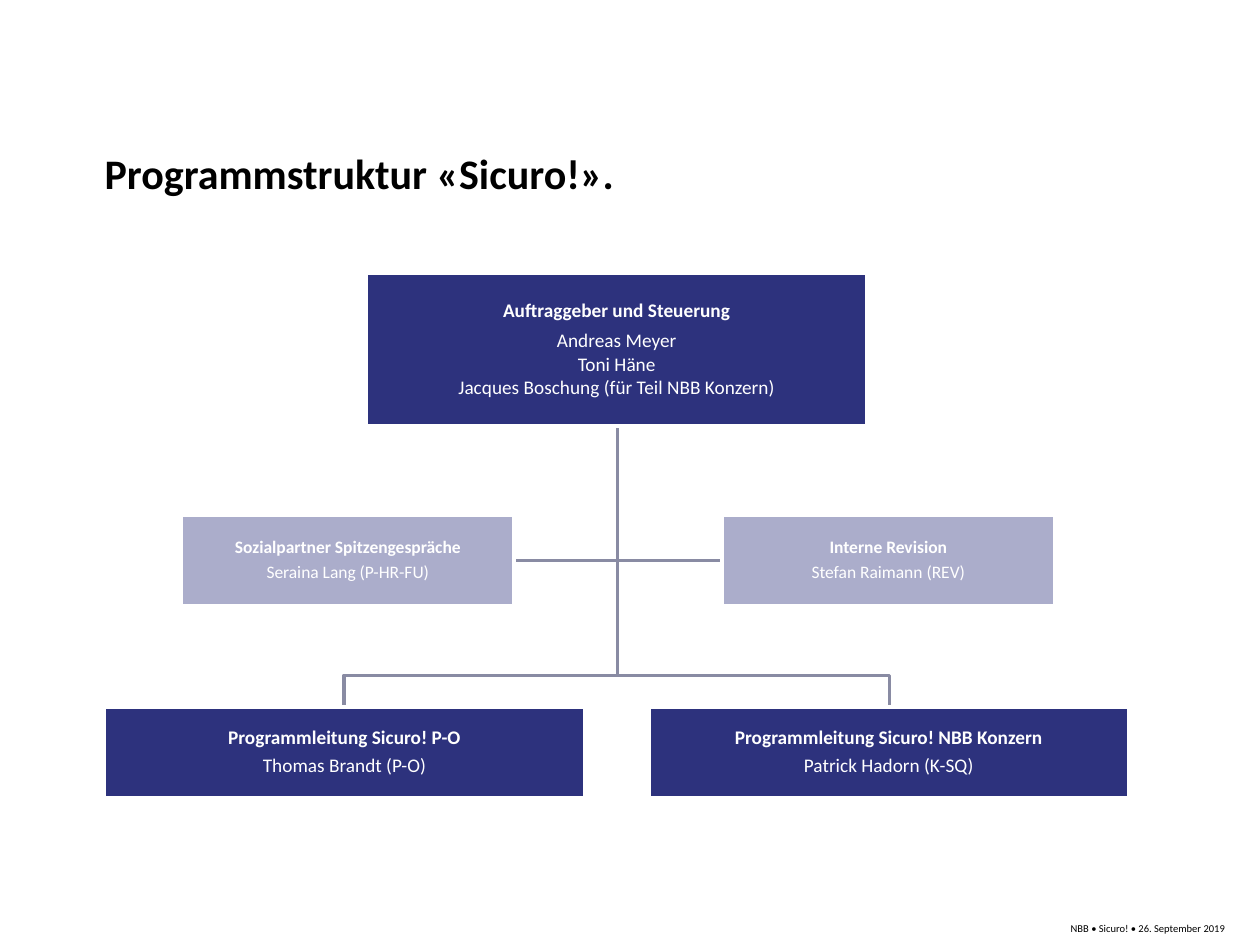
from pptx import Presentation
from pptx.dml.color import RGBColor
from pptx.enum.shapes import MSO_SHAPE
from pptx.enum.text import MSO_ANCHOR, PP_ALIGN
from pptx.util import Inches, Pt

COLORS = {"navy": "2D327D", "lilac": "ABADCB", "line": "898BA3",
          "white": "FFFFFF", "black": "000000"}
FONT = "Calibri"
TITLE = "Programmstruktur «Sicuro!»."
FOOTER = "NBB • Sicuro! • 26. September 2019"

BOXES = [
    ((2.91, 2.17, 3.97, 1.21), "navy", 11,
     ["Auftraggeber und Steuerung", "Andreas Meyer", "Toni Häne",
      "Jacques Boschung (für Teil NBB Konzern)"]),
    ((0.83, 5.61, 3.81, 0.72), "navy", 11,
     ["Programmleitung Sicuro! P-O", "Thomas Brandt (P-O)"]),
    ((5.15, 5.61, 3.81, 0.72), "navy", 11,
     ["Programmleitung Sicuro! NBB Konzern", "Patrick Hadorn (K-SQ)"]),
    ((1.44, 4.09, 2.64, 0.72), "lilac", 10,
     ["Sozialpartner Spitzengespräche", "Seraina Lang (P-HR-FU)"]),
    ((5.73, 4.09, 2.64, 0.72), "lilac", 10,
     ["Interne Revision", "Stefan Raimann (REV)"]),
]

TRUNK_X, TRUNK_Y = 4.9, 3.38
STAFF_Y, FORK_Y, LEAD_Y = 4.45, 5.36, 5.61
BRANCHES = [[(TRUNK_X, STAFF_Y), (x, STAFF_Y)] for x in (5.73, 4.08)]
BRANCHES += [[(TRUNK_X, FORK_Y), (x, FORK_Y), (x, LEAD_Y)] for x in (7.06, 2.73)]


def rgb(name):
    return RGBColor.from_string(COLORS[name])


def style(p, size, color, bold=False):
    for r in p.runs:
        r.font.name = FONT
        r.font.size = Pt(size)
        r.font.bold = bold
        r.font.color.rgb = rgb(color)


def set_margins(tf, margin):
    tf.word_wrap = True
    tf.margin_left = tf.margin_right = Inches(margin)
    tf.margin_top = tf.margin_bottom = Inches(margin)


def add_label(s, at, text, size, align, anchor, bold=False):
    tf = s.shapes.add_textbox(*map(Inches, at)).text_frame
    set_margins(tf, 0)
    tf.vertical_anchor = anchor
    tf.text = text
    p = tf.paragraphs[0]
    p.alignment = align
    style(p, size, "black", bold)


def add_branch(s, points):
    builder = s.shapes.build_freeform(Inches(TRUNK_X), Inches(TRUNK_Y))
    builder.add_line_segments([(Inches(x), Inches(y)) for x, y in points], close=False)
    sp = builder.convert_to_shape()
    sp.shadow.inherit = False
    sp.fill.background()
    sp.line.color.rgb = rgb("line")
    sp.line.width = Pt(2)


def add_box(s, at, color, size, lines):
    sp = s.shapes.add_shape(MSO_SHAPE.RECTANGLE, *map(Inches, at))
    sp.shadow.inherit = False
    sp.fill.solid()
    sp.fill.fore_color.rgb = rgb(color)
    sp.line.color.rgb = rgb("white")
    sp.line.width = Pt(2)
    tf = sp.text_frame
    set_margins(tf, 0.01)
    tf.vertical_anchor = MSO_ANCHOR.MIDDLE
    tf.text = "\n".join(lines)
    for i, p in enumerate(tf.paragraphs):
        p.alignment = PP_ALIGN.CENTER
        if i == 0 or len(lines) == 2:
            p.line_spacing = 0.9
            p.space_after = Pt(0.35 * size)
        style(p, size, "white", bold=i == 0)


def main():
    prs = Presentation()
    prs.slide_width, prs.slide_height = Inches(10), Inches(7.5)
    s = prs.slides.add_slide(prs.slide_layouts[6])
    add_label(s, (0.83, 0.76, 8.82, 0.81), TITLE, 24,
              PP_ALIGN.LEFT, MSO_ANCHOR.BOTTOM, bold=True)
    for points in BRANCHES:
        add_branch(s, points)
    for box in BOXES:
        add_box(s, *box)
    add_label(s, (5, 7.32, 4.72, 0.14), FOOTER, 6, PP_ALIGN.RIGHT, MSO_ANCHOR.TOP)
    prs.save("out.pptx")


if __name__ == "__main__":
    main()
